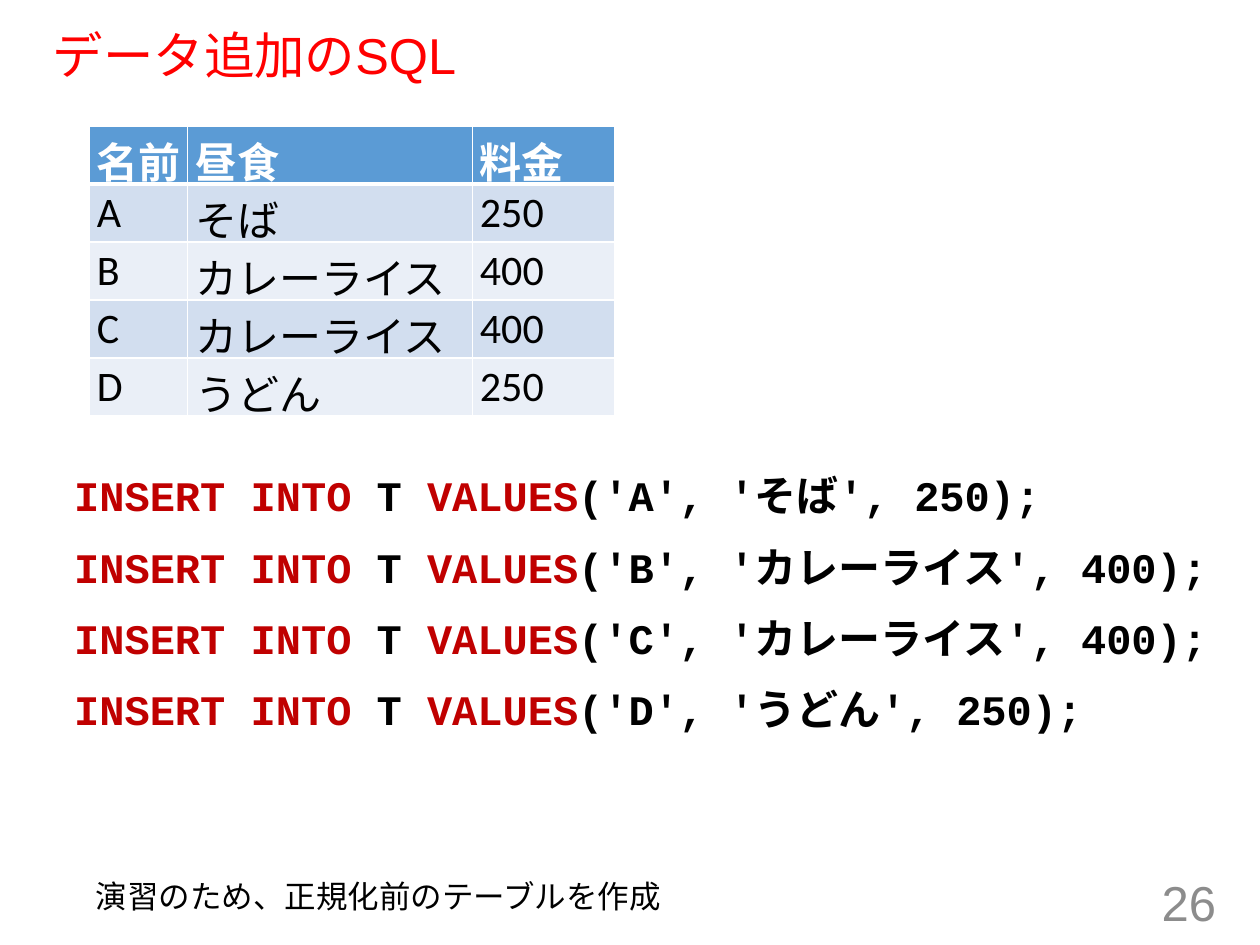
import lxml.etree
import pptx
import pptx.dml.color
import pptx.enum.text
import pptx.oxml.ns
import pptx.util

Inches, Pt = pptx.util.Inches, pptx.util.Pt
RGBColor = pptx.dml.color.RGBColor
Align = pptx.enum.text.PP_ALIGN
Anchor = pptx.enum.text.MSO_ANCHOR
qn = pptx.oxml.ns.qn

RED = RGBColor(0xFF, 0x00, 0x00)
KEYWORD = RGBColor(0xC0, 0x00, 0x00)
BLACK = RGBColor(0x00, 0x00, 0x00)
WHITE = RGBColor(0xFF, 0xFF, 0xFF)
GRAY = RGBColor(0x8C, 0x8C, 0x8C)
HEADER = RGBColor(0x5B, 0x9B, 0xD5)
BANDS = [RGBColor(0xD2, 0xDE, 0xEF), RGBColor(0xEA, 0xEF, 0xF7)]

COLUMNS = ["名前", "昼食", "料金"]
LUNCHES = [
    ("A", "そば", 250),
    ("B", "カレーライス", 400),
    ("C", "カレーライス", 400),
    ("D", "うどん", 250),
]
COLUMN_WIDTHS = [0.78, 2.26, 1.13]
TABLE_HEIGHT = 2.28


def style(paragraph, font_name, size, color, bold=False):
    font = paragraph.font
    font.name, font.size, font.bold = font_name, Pt(size), bold
    font.color.rgb = color


def add_title(slide, text):
    title = slide.shapes.title
    title.left, title.top = Inches(0.32), Inches(0.21)
    title.width, title.height = Inches(9.25), Inches(0.51)
    frame = title.text_frame
    frame.text = text
    frame.auto_size = pptx.enum.text.MSO_AUTO_SIZE.NONE
    frame.vertical_anchor = Anchor.MIDDLE
    heading = frame.paragraphs[0]
    heading.alignment, heading.line_spacing = Align.LEFT, 0.9
    style(heading, "Arial", 28.8, RED)


def add_text_frame(slide, left, top, width, height, wrap=True):
    box = slide.shapes.add_textbox(*map(Inches, (left, top, width, height)))
    box.text_frame.word_wrap = wrap
    return box.text_frame


def set_borders(cell, top, bottom):
    properties = cell._tc.get_or_add_tcPr()
    for position, (side, width) in enumerate(
            [("lnL", 1), ("lnR", 1), ("lnT", top), ("lnB", bottom)]):
        line = lxml.etree.Element(qn(f"a:{side}"), w=str(Pt(width)))
        fill = lxml.etree.SubElement(line, qn("a:solidFill"))
        lxml.etree.SubElement(fill, qn("a:srgbClr"), val=str(WHITE))
        properties.insert(position, line)


def add_lunch_table(slide):
    rows = [COLUMNS, *LUNCHES]
    table = slide.shapes.add_table(
        len(rows), len(COLUMNS), Inches(0.71), Inches(1),
        Inches(sum(COLUMN_WIDTHS)), Inches(TABLE_HEIGHT)).table
    for column, width in zip(table.columns, COLUMN_WIDTHS):
        column.width = Inches(width)
    for row_index, row in enumerate(rows):
        is_header = row_index == 0
        for column_index, value in enumerate(row):
            cell = table.cell(row_index, column_index)
            cell.margin_left, cell.margin_right = Inches(0.06), 0
            cell.margin_top = cell.margin_bottom = Inches(0.03)
            cell.fill.solid()
            cell.fill.fore_color.rgb = HEADER if is_header else BANDS[(row_index - 1) % 2]
            set_borders(cell, 3 if row_index == 1 else 1, 3 if is_header else 1)
            cell.text = str(value)
            style(cell.text_frame.paragraphs[0], "Calibri", 24,
                  WHITE if is_header else BLACK, is_header)


def add_statements(slide):
    frame = add_text_frame(slide, 0.49, 3.68, 9.25, 2.37)
    for index, (name, lunch, price) in enumerate(LUNCHES):
        statement = frame.add_paragraph() if index else frame.paragraphs[0]
        statement.space_before = Pt(12)
        style(statement, "Courier New", 24, BLACK, True)
        for text, color in [("INSERT INTO ", KEYWORD), ("T ", BLACK), ("VALUES", KEYWORD),
                            (f"('{name}', '{lunch}', {price});", BLACK)]:
            run = statement.add_run()
            run.text = text
            run.font.color.rgb = color


def add_note(slide, text):
    frame = add_text_frame(slide, 0.66, 6.91, 4.75, 0.4, wrap=False)
    frame.text = text
    style(frame.paragraphs[0], "Calibri", 18, BLACK)


def add_page_number(slide, number):
    frame = add_text_frame(slide, 7.5, 6.96, 2.25, 0.4)
    frame.text = str(number)
    frame.vertical_anchor = Anchor.MIDDLE
    frame.paragraphs[0].alignment = Align.RIGHT
    style(frame.paragraphs[0], "Arial", 28, GRAY)


def main():
    presentation = pptx.Presentation()
    presentation.slide_width, presentation.slide_height = Inches(10), Inches(7.5)
    slide = presentation.slides.add_slide(presentation.slide_layouts[5])
    add_title(slide, "データ追加のSQL")
    add_page_number(slide, 26)
    add_statements(slide)
    add_note(slide, "演習のため、正規化前のテーブルを作成")
    add_lunch_table(slide)
    presentation.save("out.pptx")


if __name__ == "__main__":
    main()
